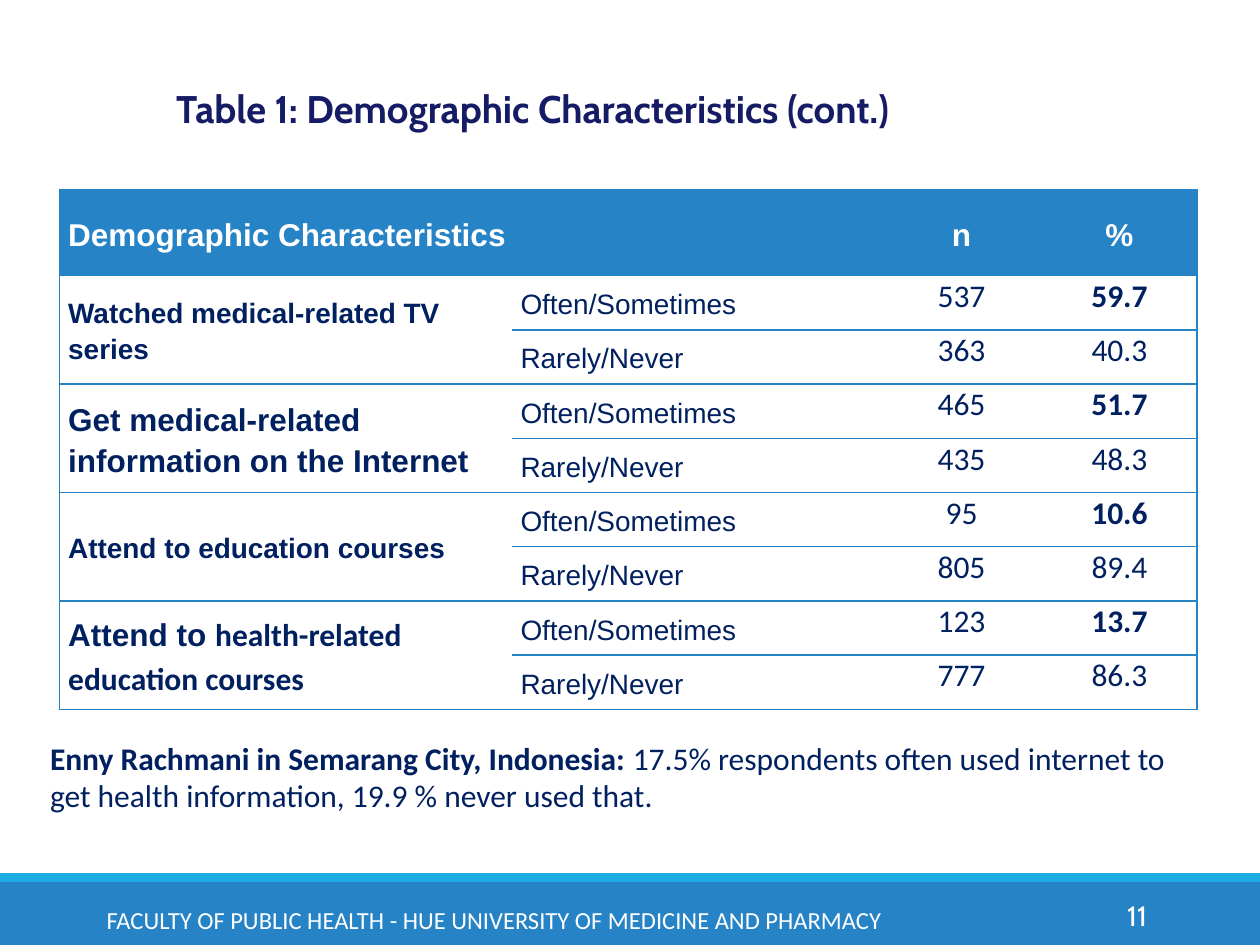
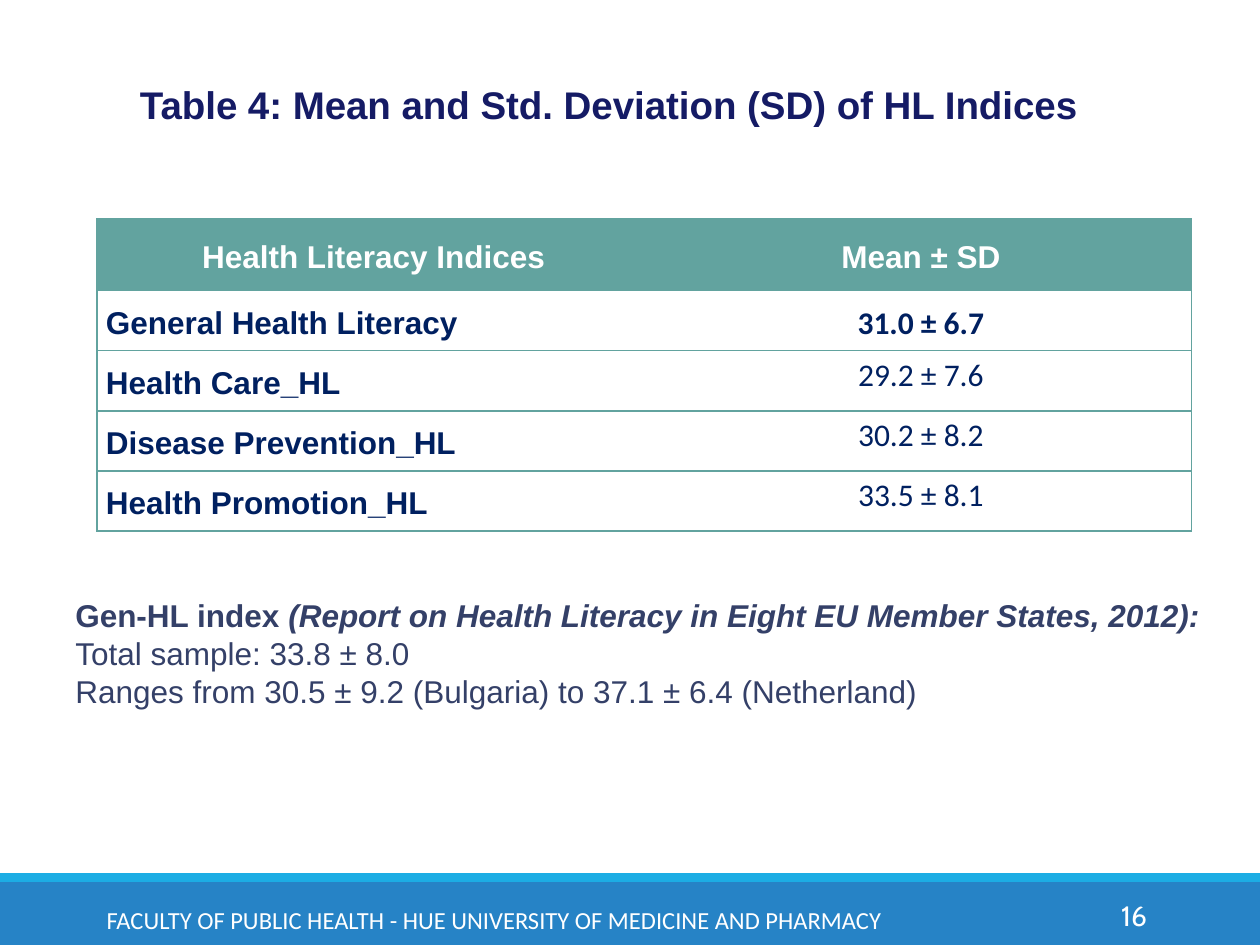
from lxml.etree import SubElement
from pptx import Presentation
from pptx.dml.color import RGBColor
from pptx.enum.shapes import MSO_SHAPE as Shape
from pptx.enum.text import MSO_ANCHOR as Anchor, PP_ALIGN as Align
from pptx.oxml import parse_xml
from pptx.oxml.ns import nsdecls, qn
from pptx.util import Pt

BLUE = RGBColor(0x26, 0x83, 0xC6)
SKY = RGBColor(0x1C, 0xAD, 0xE4)
TEAL = RGBColor(0x62, 0xA3, 0x9F)
NAVY = RGBColor(0x00, 0x20, 0x60)
INDIGO = RGBColor(0x15, 0x1B, 0x65)
SLATE = RGBColor(0x34, 0x40, 0x68)
WHITE = RGBColor(0xFF, 0xFF, 0xFF)

FOOTER = "FACULTY OF PUBLIC HEALTH - HUE UNIVERSITY OF MEDICINE AND PHARMACY"
TITLE = dict(size=Pt(22), color=INDIGO, bold=True)
HEADER = dict(name="Arial", size=Pt(18), color=WHITE, bold=True)
LABEL = dict(HEADER, color=NAVY)
SMALL_LABEL = dict(LABEL, size=Pt(16))
ANSWER = dict(SMALL_LABEL, bold=False)
VALUE = dict(name="Calibri", size=Pt(18), color=NAVY, bold=False)
KEY_VALUE = dict(VALUE, bold=True)
NOTE = dict(name="Arial", size=Pt(18), color=SLATE)
KEY_NOTE = dict(NOTE, bold=True)

HABITS = [
    ([("Watched medical-related TV series", SMALL_LABEL)],
     ("537", "59.7"), ("363", "40.3")),
    ([("Get medical-related information on the Internet", LABEL)],
     ("465", "51.7"), ("435", "48.3")),
    ([("Attend to education courses", SMALL_LABEL)],
     ("95", "10.6"), ("805", "89.4")),
    ([("Attend to ", LABEL), ("health-related education courses", KEY_VALUE)],
     ("123", "13.7"), ("777", "86.3")),
]
INDICES = [
    ("General Health Literacy", "31.0 ± 6.7"),
    ("Health Care_HL", "29.2 ± 7.6"),
    ("Disease Prevention_HL", "30.2 ± 8.2"),
    ("Health Promotion_HL", "33.5 ± 8.1"),
]


class SlideBuilder:
    """Holds the deck, its style and the page being filled."""

    def __init__(self):
        self.deck = Presentation()
        self.deck.slide_width, self.deck.slide_height = Pt(720), Pt(540)
        self.page = None

    def add_page(self, number):
        self.page = self.deck.slides.add_slide(self.deck.slide_layouts[6])
        self.band(504, 36, BLUE)
        self.band(499, 5, SKY)
        self.text((18, 516.5, 529, 18),
                  [[(FOOTER, dict(name="Calibri", size=Pt(14), color=WHITE))]],
                  Align.CENTER, Anchor.MIDDLE)
        self.text((584.5, 508.5, 78, 29),
                  [[(number, dict(name="Cabin", size=Pt(16), color=WHITE))]],
                  Align.RIGHT, Anchor.MIDDLE)

    def band(self, top, height, color):
        band = self.page.shapes.add_shape(
            Shape.RECTANGLE, 0, Pt(top), self.deck.slide_width, Pt(height))
        band.shadow.inherit = False
        band.fill.solid()
        band.fill.fore_color.rgb = color
        band.line.fill.background()

    def text(self, place, paras, align=Align.LEFT, anchor=Anchor.TOP, spacing=1.0):
        box = self.page.shapes.add_textbox(*map(Pt, place))
        box.text_frame.word_wrap = True
        box.text_frame.vertical_anchor = anchor
        self.set_paras(box.text_frame, paras, align, spacing)

    def set_paras(self, frame, paras, align, spacing):
        for index, spans in enumerate(paras):
            para = frame.add_paragraph() if index else frame.paragraphs[0]
            para.alignment, para.line_spacing = align, spacing
            for words, style in spans:
                span = para.add_run()
                span.text = words
                for key, value in style.items():
                    if key == "color":
                        span.font.color.rgb = value
                    else:
                        setattr(span.font, key, value)

    def table(self, left, top, widths, heights):
        table = self.page.shapes.add_table(
            len(heights), len(widths), Pt(left), Pt(top),
            Pt(sum(widths)), Pt(sum(heights))).table
        table.first_row = table.horz_banding = False
        for column, width in zip(table.columns, widths):
            column.width = Pt(width)
        for row, height in zip(table.rows, heights):
            row.height = Pt(height)
        return table

    def cell(self, cell, spans, align=Align.LEFT, anchor=Anchor.MIDDLE,
             spacing=1.15, side=5, top=0):
        cell.margin_left = cell.margin_right = Pt(side)
        cell.margin_top, cell.margin_bottom = Pt(top), 0
        cell.vertical_anchor = anchor
        self.set_paras(cell.text_frame, [spans], align, spacing)

    def finish_table(self, table, accent):
        last = len(table.columns) - 1
        for row_index, row in enumerate(table.rows):
            for column_index, cell in enumerate(row.cells):
                cell.fill.solid()
                cell.fill.fore_color.rgb = WHITE if row_index else accent
                edges = dict(lnL=column_index == 0, lnR=column_index == last,
                             lnT=row_index == 0 or not cell.is_spanned, lnB=True)
                self.borders(cell, edges, accent)

    def borders(self, cell, edges, color):
        properties = cell._tc.get_or_add_tcPr()
        for position, (edge, visible) in enumerate(edges.items()):
            line = parse_xml(f'<a:{edge} {nsdecls("a")} w="12700"/>')
            if visible:
                fill = SubElement(line, qn("a:solidFill"))
                SubElement(fill, qn("a:srgbClr"), val=str(color))
            else:
                SubElement(line, qn("a:noFill"))
            properties.insert(position, line)


def add_demographics(builder):
    builder.add_page("11")
    table = builder.table(34, 108.5, [258.5, 211, 92, 88.5], [49] + [31] * 8)
    table.cell(0, 0).merge(table.cell(0, 1))
    builder.cell(table.cell(0, 0), [("Demographic Characteristics", HEADER)])
    for column, heading in ((2, "n"), (3, "%")):
        builder.cell(table.cell(0, column), [(heading, HEADER)], Align.CENTER)
    for group, (label, *counts) in enumerate(HABITS):
        first = 1 + 2 * group
        table.cell(first, 0).merge(table.cell(first + 1, 0))
        builder.cell(table.cell(first, 0), label)
        answers = zip(("Often/Sometimes", "Rarely/Never"), counts,
                      (KEY_VALUE, VALUE))
        for row, (answer, (count, percent), style) in enumerate(answers, first):
            builder.cell(table.cell(row, 1), [(answer, ANSWER)])
            for column, span in ((2, (count, VALUE)), (3, (percent, style))):
                builder.cell(table.cell(row, column), [span], Align.CENTER,
                             Anchor.TOP, 1.0, 1, 1)
    builder.finish_table(table, BLUE)
    builder.text((93.5, 41, 514, 37.5),
                 [[("Table 1: Demographic Characteristics (cont.)",
                    dict(TITLE, name="Cabin"))]], spacing=1.15)
    builder.text((21.5, 418.5, 675, 94), [[
        ("Enny Rachmani in Semarang City, Indonesia: ", KEY_VALUE),
        ("17.5% respondents often used internet to get health information, "
         "19.9 % never used that.", VALUE)]])


def add_indices(builder):
    builder.add_page("16")
    table = builder.table(55.5, 125, [316, 309.5], [41] + [34.4] * 4)
    for column, heading in enumerate(("Health Literacy Indices", "Mean ± SD")):
        builder.cell(table.cell(0, column), [(heading, HEADER)], Align.CENTER)
    for row, (index, mean) in enumerate(INDICES, 1):
        style, anchor = (KEY_VALUE, Anchor.MIDDLE) if row == 1 else (VALUE, Anchor.TOP)
        builder.cell(table.cell(row, 0), [(index, LABEL)])
        builder.cell(table.cell(row, 1), [(mean, style)], Align.CENTER, anchor)
    builder.finish_table(table, TEAL)
    builder.text((26.5, 43, 643, 34),
                 [[("Table 4: Mean and Std. Deviation (SD) of HL Indices",
                    dict(TITLE, name="Arial"))]], Align.CENTER)
    builder.text((36, 337, 664.5, 94), [
        [("Gen-HL index ", KEY_NOTE),
         ("(Report on Health Literacy in Eight EU Member States, 2012):",
          dict(KEY_NOTE, italic=True))],
        [("Total sample: 33.8 ± 8.0", NOTE)],
        [("Ranges from 30.5 ± 9.2 (Bulgaria) to 37.1 ± 6.4 (Netherland)", NOTE)]])


def main():
    builder = SlideBuilder()
    add_demographics(builder)
    add_indices(builder)
    builder.deck.save("out.pptx")


if __name__ == "__main__":
    main()
